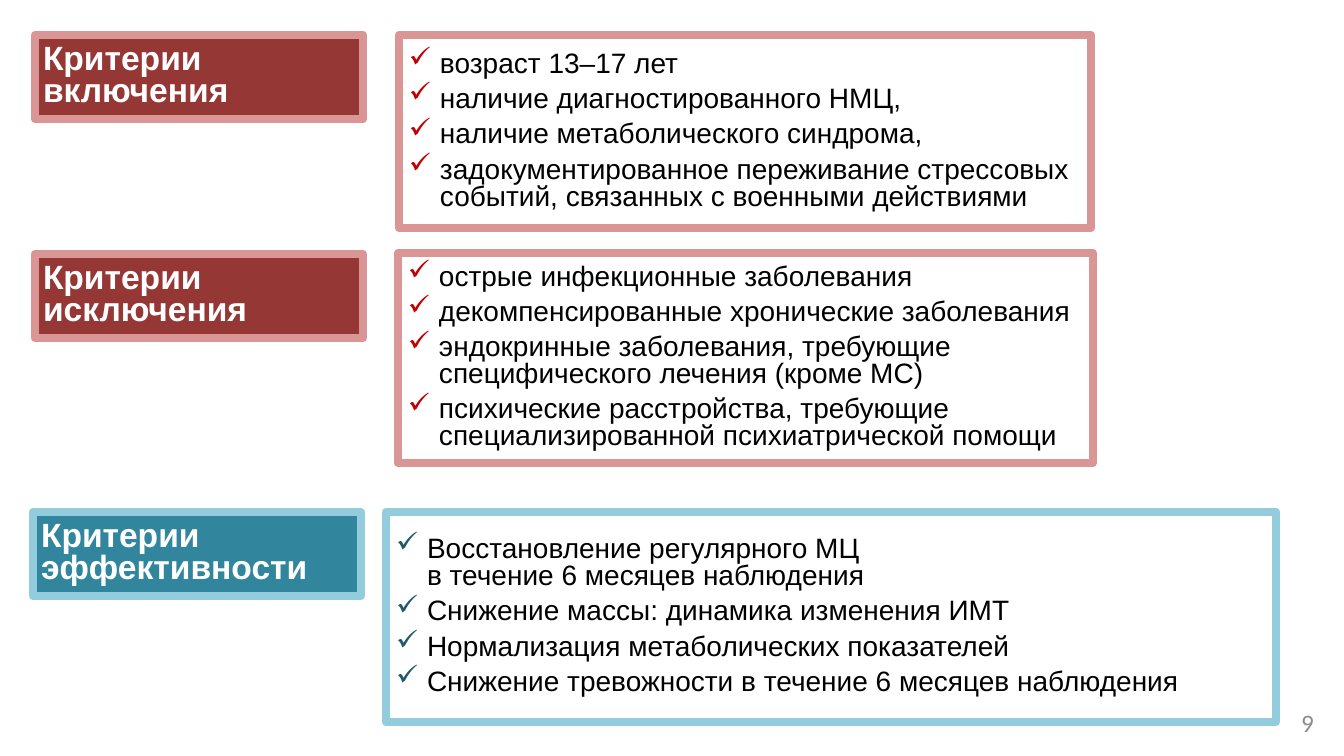
from dataclasses import dataclass

from lxml.etree import SubElement
from pptx import Presentation
from pptx.dml.color import RGBColor
from pptx.enum.shapes import MSO_SHAPE
from pptx.enum.text import MSO_ANCHOR, MSO_AUTO_SIZE, PP_ALIGN
from pptx.oxml.ns import qn
from pptx.util import Pt

SECTIONS = [
    {
        "heading": "Критерии включения",
        "palette": "red",
        "heading_at": (35, 35),
        "panel_at": (399, 35, 692, 193),
        "criteria": [
            "возраст 13–17 лет",
            "наличие диагностированного НМЦ,",
            "наличие метаболического синдрома,",
            "задокументированное переживание стрессовых событий, связанных с военными действиями",
        ],
    },
    {
        "heading": "Критерии исключения",
        "palette": "red",
        "heading_at": (35, 254),
        "panel_at": (398, 253, 695, 210),
        "criteria": [
            "острые инфекционные заболевания",
            "декомпенсированные хронические заболевания",
            "эндокринные заболевания, требующие специфического лечения (кроме МС)",
            "психические расстройства, требующие специализированной психиатрической помощи",
        ],
    },
    {
        "heading": "Критерии эффективности",
        "palette": "teal",
        "heading_at": (33, 512),
        "panel_at": (386, 512, 890, 210),
        "is_title": True,
        "criteria": [
            "Восстановление регулярного МЦ\nв течение 6 месяцев наблюдения",
            "Снижение массы: динамика изменения ИМТ",
            "Нормализация метаболических показателей",
            "Снижение тревожности в течение 6 месяцев наблюдения",
        ],
    },
]
PAGE_NUMBER = "9"

SLIDE_SIZE = (1344, 756)
HEADING_SIZE = (328, 84)
PAGE_NUMBER_AT = (1005, 707, 309, 32)
HEADING_INSETS = (8, 4, 8, 4)
PANEL_INSETS = (10, 5, 10, 5)
BULLET_INDENT = 31
EMU_PER_PX = 12192000 / 1344


@dataclass(frozen=True)
class Palette:
    fill: str
    border: str
    check: str


@dataclass(frozen=True)
class Theme:
    red = Palette("953735", "D99694", "C00000")
    teal = Palette("31859C", "93CDDD", "215968")
    white = "FFFFFF"
    black = "000000"
    gray = "8C8C8C"
    font = "Arial"
    number_font = "Calibri"
    heading_pt = 24
    criterion_pt = 20
    number_pt = 18
    border_pt = 6
    space_after_pt = 6
    line_spacing = 0.8


THEME = Theme()


def px(length):
    return round(length * EMU_PER_PX)


def place(shape, left, top, width, height):
    shape.left, shape.top = px(left), px(top)
    shape.width, shape.height = px(width), px(height)


def set_frame(frame, insets, anchor):
    frame.word_wrap = True
    frame.auto_size = MSO_AUTO_SIZE.NONE
    frame.vertical_anchor = anchor
    frame.margin_left, frame.margin_top, frame.margin_right, frame.margin_bottom = map(px, insets)


def set_border(shape, color):
    shape.line.color.rgb = RGBColor.from_string(color)
    shape.line.width = Pt(THEME.border_pt)
    SubElement(shape.line._get_or_add_ln(), qn("a:round"))


def add_words(paragraph, words, size, color, font=THEME.font, bold=False):
    for index, line in enumerate(words.split("\n")):
        if index:
            paragraph.add_line_break()
        run = paragraph.add_run()
        run.text = line
        run.font.name = font
        run.font.size = Pt(size)
        run.font.bold = bold
        run.font.color.rgb = RGBColor.from_string(color)


def set_spacing(paragraph):
    paragraph.alignment = PP_ALIGN.LEFT
    paragraph.line_spacing = THEME.line_spacing
    paragraph.space_after = Pt(THEME.space_after_pt)


def add_check(paragraph, color):
    properties = paragraph._p.get_or_add_pPr()
    properties.set("marL", str(px(BULLET_INDENT)))
    properties.set("indent", str(-px(BULLET_INDENT)))
    bullet_color = SubElement(properties, qn("a:buClr"))
    SubElement(bullet_color, qn("a:srgbClr")).set("val", color)
    SubElement(properties, qn("a:buChar")).set("char", "✓")


def add_rectangle(slide, at):
    rectangle = slide.shapes.add_shape(MSO_SHAPE.RECTANGLE, *map(px, at))
    rectangle.shadow.inherit = False
    return rectangle


def add_heading(slide, section, palette):
    at = section["heading_at"] + HEADING_SIZE
    if section.get("is_title"):
        heading = slide.shapes.title
        place(heading, *at)
    else:
        heading = add_rectangle(slide, at)
    heading.fill.solid()
    heading.fill.fore_color.rgb = RGBColor.from_string(palette.fill)
    set_border(heading, palette.border)
    set_frame(heading.text_frame, HEADING_INSETS, MSO_ANCHOR.MIDDLE)
    paragraph = heading.text_frame.paragraphs[0]
    set_spacing(paragraph)
    add_words(paragraph, section["heading"], THEME.heading_pt, THEME.white, bold=True)


def add_panel(slide, section, palette):
    panel = add_rectangle(slide, section["panel_at"])
    panel.fill.background()
    set_border(panel, palette.border)
    frame = panel.text_frame
    set_frame(frame, PANEL_INSETS, MSO_ANCHOR.MIDDLE)
    for index, criterion in enumerate(section["criteria"]):
        paragraph = frame.add_paragraph() if index else frame.paragraphs[0]
        add_check(paragraph, palette.check)
        set_spacing(paragraph)
        add_words(paragraph, criterion, THEME.criterion_pt, THEME.black)


def add_page_number(slide):
    number = slide.shapes.add_textbox(*map(px, PAGE_NUMBER_AT))
    set_frame(number.text_frame, (0, 0, 0, 0), MSO_ANCHOR.TOP)
    paragraph = number.text_frame.paragraphs[0]
    paragraph.alignment = PP_ALIGN.RIGHT
    add_words(paragraph, PAGE_NUMBER, THEME.number_pt, THEME.gray, THEME.number_font)


def main():
    deck = Presentation()
    deck.slide_width, deck.slide_height = map(px, SLIDE_SIZE)
    slide = deck.slides.add_slide(deck.slide_layouts[5])
    for section in SECTIONS:
        palette = getattr(THEME, section["palette"])
        add_heading(slide, section, palette)
        add_panel(slide, section, palette)
    add_page_number(slide)
    deck.save("out.pptx")


if __name__ == "__main__":
    main()
